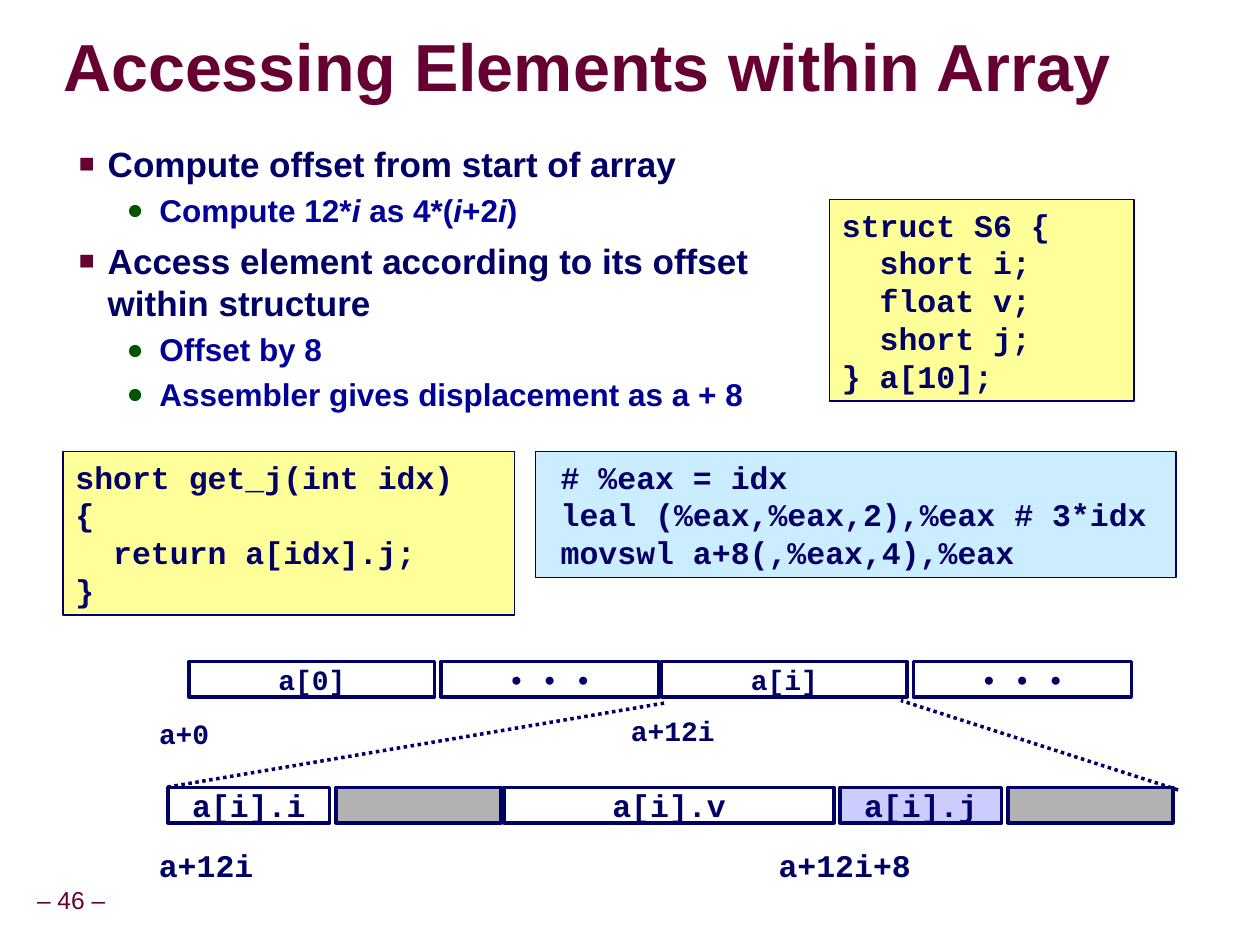
from lxml.etree import SubElement
from pptx import Presentation
from pptx.dml.color import RGBColor
from pptx.enum.dml import MSO_LINE
from pptx.enum.shapes import MSO_CONNECTOR, MSO_SHAPE
from pptx.enum.text import MSO_ANCHOR as ANCHOR, PP_ALIGN as ALIGN
from pptx.oxml.ns import qn
from pptx.util import Pt

COLORS = {
    "maroon": "660033", "navy": "000066", "blue": "000099", "green": "005400",
    "white": "FFFFFF", "yellow": "FFFF99", "sky": "CCECFF",
    "lavender": "CCCCFF", "gray": "B2B2B2",
}
CODE = {"name": "Courier New", "size": 18, "bold": True, "color": "navy"}
SMALL_CODE = {**CODE, "size": 16}
TITLE = {"name": "Arial", "size": 38, "bold": True, "color": "maroon"}
PAGE = {"name": "Arial", "size": 14, "bold": False, "color": "maroon"}
LEVELS = [
    {"font": {"name": "Arial", "size": 20, "bold": True, "color": "navy"},
     "margin": 42.5, "indent": -16.5, "before": 6.2, "spacing": 1,
     "bullet": "■", "bullet_color": "maroon", "bullet_size": 75},
    {"font": {"name": "Arial", "size": 18, "bold": True, "color": "blue"},
     "margin": 72, "indent": -18.7, "before": 2.2, "spacing": 1.07,
     "bullet": "●", "bullet_color": "green", "bullet_size": 90},
]

# (level, runs); every second run is italic
POINTS = [
    (0, ["Compute offset from start of array"]),
    (1, ["Compute 12*", "i", " as 4*(", "i", "+2", "i", ")"]),
    (0, ["Access element according to its offset within structure"]),
    (1, ["Offset by 8"]),
    (1, ["Assembler gives displacement as a + 8"]),
]

# (left, top, width, height), fill, left inset, lines
LISTINGS = [
    ((36, 258, 258, 93.6), "yellow", 7.2,
     ["short get_j(int idx)", "{", "  return a[idx].j;", "}"]),
    ((306, 258, 366, 72), "sky", 14.4,
     ["# %eax = idx", "leal (%eax,%eax,2),%eax # 3*idx",
      "movswl a+8(,%eax,4),%eax"]),
    ((474, 114, 174, 115.2), "yellow", 7.2,
     ["struct S6 {", "  short i;", "  float v;", "  short j;", "} a[10];"]),
]

# Cells: (label, pitch, gap after, fill)
DOTS = "•\u00a0• •"
ARRAY = [("a[0]", 144, 3.6, "white"), (DOTS, 126, 1.5, "white"),
         ("a[i]", 144, 3.6, "white"), (DOTS, 126, 1.5, "white")]
FIELDS = [("a[i].i", 96, 3.6, "white"), ("", 96, 1.7, "gray"),
          ("a[i].v", 192, 3.4, "white"), ("a[i].j", 96, 3.6, "lavender"),
          ("", 96, 1.7, "gray")]
CELL_ROWS = [(108, 378, ARRAY, SMALL_CODE), (96, 450, FIELDS, CODE)]
CELL_HEIGHT = 20.2

ADDRESSES = [
    ("a+0", (81.5, 406, 45.2, 26), SMALL_CODE, ALIGN.RIGHT),
    ("a+12i", (345.5, 404, 70, 26), SMALL_CODE, ALIGN.RIGHT),
    ("a+12i", (83.7, 480.2, 72, 28.8), CODE, ALIGN.LEFT),
    ("a+12i+8", (437.8, 480.2, 94, 28.8), CODE, ALIGN.LEFT),
]
ZOOM_LINES = [((379.5, 401.8), (94.3, 450)), ((673.2, 451.4), (514.8, 400.3))]


def rgb(color):
    return RGBColor.from_string(COLORS[color])


def points(values):
    return [Pt(value) for value in values]


def add_run(paragraph, text, font, italic=False):
    run = paragraph.add_run()
    run.text = text
    values = {"name": font["name"], "size": Pt(font["size"]),
              "bold": font["bold"], "italic": italic}
    for attribute, value in values.items():
        setattr(run.font, attribute, value)
    run.font.color.rgb = rgb(font["color"])


def write(shape, lines, font, align=ALIGN.LEFT, spacing=1, **frame_format):
    frame = shape.text_frame
    values = {"word_wrap": True, "vertical_anchor": ANCHOR.TOP,
              "margin_left": Pt(7.2), "margin_right": Pt(7.2),
              "margin_top": Pt(3.6), "margin_bottom": Pt(3.6), **frame_format}
    for attribute, value in values.items():
        setattr(frame, attribute, value)
    for index, line in enumerate(lines):
        paragraph = frame.add_paragraph() if index else frame.paragraphs[0]
        paragraph.alignment = align
        paragraph.line_spacing = spacing
        add_run(paragraph, line, font)


def add_box(slide, place, fill, line_width):
    box = slide.shapes.add_shape(MSO_SHAPE.RECTANGLE, *points(place))
    box.shadow.inherit = False
    box.fill.solid()
    box.fill.fore_color.rgb = rgb(fill)
    box.line.color.rgb = rgb("navy")
    box.line.width = Pt(line_width)
    return box


def add_text(slide, place, lines, font, **text_format):
    write(slide.shapes.add_textbox(*points(place)), lines, font, **text_format)


def add_bullet(paragraph, level):
    properties = paragraph._p.get_or_add_pPr()
    properties.set("marL", str(Pt(level["margin"])))
    properties.set("indent", str(Pt(level["indent"])))
    color = SubElement(properties, qn("a:buClr"))
    SubElement(color, qn("a:srgbClr"), val=COLORS[level["bullet_color"]])
    SubElement(properties, qn("a:buSzPct"), val=str(level["bullet_size"] * 1000))
    SubElement(properties, qn("a:buFont"), typeface="Arial")
    SubElement(properties, qn("a:buChar"), char=level["bullet"])


def add_points(slide):
    frame = slide.shapes.add_textbox(*points((12, 78, 428.4, 172))).text_frame
    frame.word_wrap = True
    for index, (depth, runs) in enumerate(POINTS):
        level = LEVELS[depth]
        paragraph = frame.add_paragraph() if index else frame.paragraphs[0]
        paragraph.space_before = Pt(level["before"])
        paragraph.line_spacing = level["spacing"]
        add_bullet(paragraph, level)
        for position, text in enumerate(runs):
            add_run(paragraph, text, level["font"], italic=position % 2 == 1)


def add_cells(slide, left, top, cells, font):
    for label, pitch, gap, fill in cells:
        cell = add_box(slide, (left, top, pitch - gap, CELL_HEIGHT), fill, 2)
        if label:
            write(cell, [label], font, align=ALIGN.CENTER, word_wrap=False,
                  vertical_anchor=ANCHOR.MIDDLE)
        left += pitch


def add_zoom_line(slide, start, end):
    zoom = slide.shapes.add_connector(MSO_CONNECTOR.STRAIGHT,
                                      *points(start + end))
    zoom.line.color.rgb = rgb("navy")
    zoom.line.width = Pt(2)
    zoom.line.dash_style = MSO_LINE.ROUND_DOT
    SubElement(zoom._element.spPr, qn("a:effectLst"))


def main():
    deck = Presentation()
    deck.slide_width, deck.slide_height = Pt(720), Pt(540)
    slide = deck.slides.add_slide(deck.slide_layouts[6])

    add_text(slide, (-6.5, 503, 94.3, 24.5), ["– 46 –"], PAGE,
             align=ALIGN.CENTER, spacing=0.9, word_wrap=False,
             vertical_anchor=ANCHOR.MIDDLE,
             margin_left=Pt(3.6), margin_right=Pt(3.6))
    add_text(slide, (36, 17.7, 602, 45.4), ["Accessing Elements within Array"],
             TITLE, spacing=0.87, vertical_anchor=ANCHOR.MIDDLE,
             margin_left=0, margin_right=0, margin_top=0, margin_bottom=0)
    add_points(slide)
    for start, end in ZOOM_LINES:
        add_zoom_line(slide, start, end)
    for place, fill, inset, lines in LISTINGS:
        write(add_box(slide, place, fill, 1), lines, CODE,
              margin_left=Pt(inset))
    for row in CELL_ROWS:
        add_cells(slide, *row)
    for label, place, font, align in ADDRESSES:
        add_text(slide, place, [label], font, align=align, word_wrap=False)
    deck.save("out.pptx")


if __name__ == "__main__":
    main()
